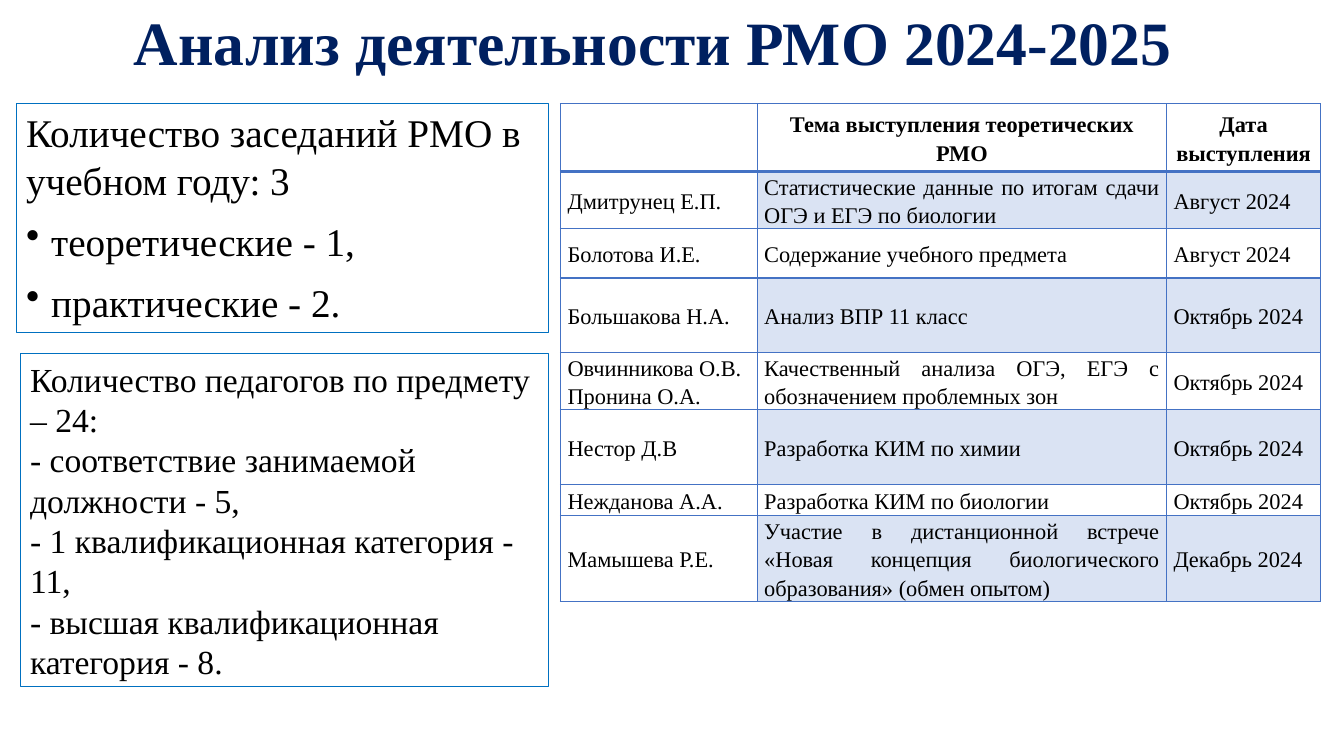
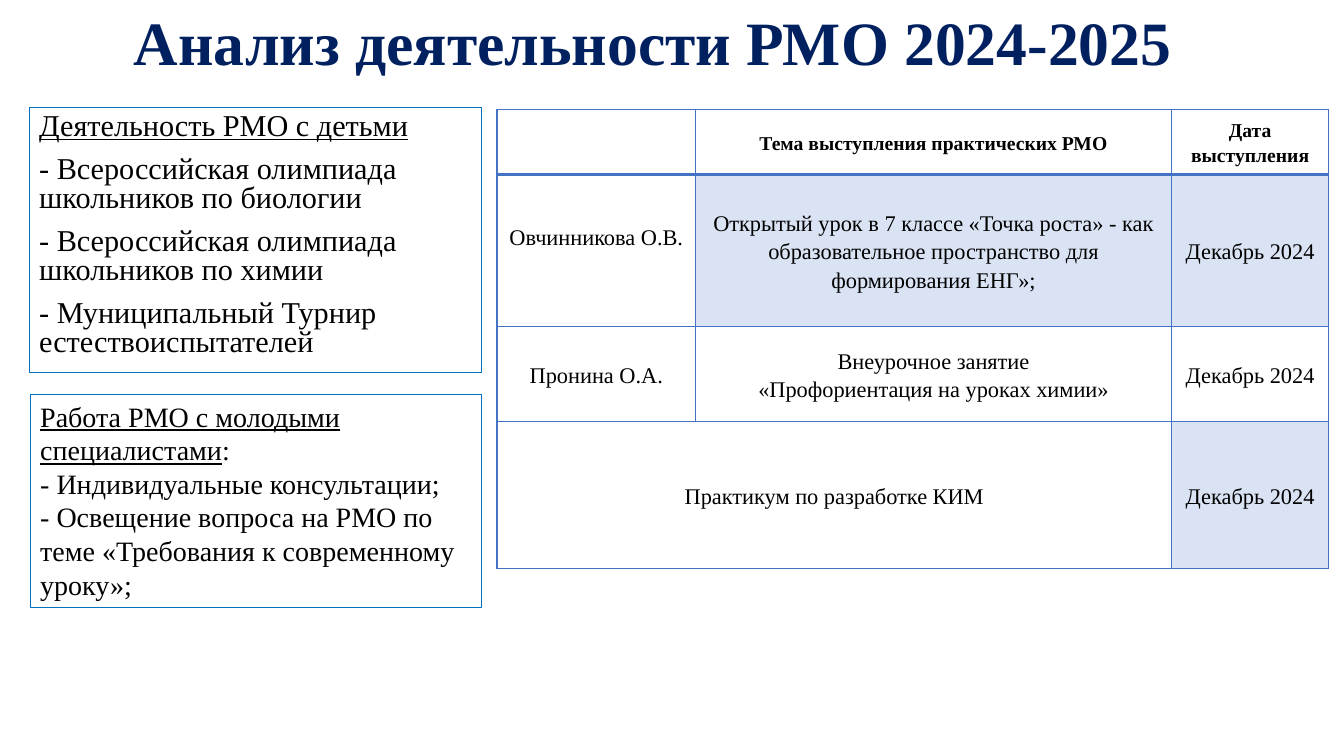
from lxml import etree
from pptx import Presentation
from pptx.dml.color import RGBColor
from pptx.enum.shapes import MSO_SHAPE
from pptx.enum.text import MSO_ANCHOR, MSO_AUTO_SIZE, PP_ALIGN
from pptx.oxml.ns import qn
from pptx.util import Pt

LEFT, CENTER, JUSTIFY = PP_ALIGN.LEFT, PP_ALIGN.CENTER, PP_ALIGN.JUSTIFY
TOP, MIDDLE = MSO_ANCHOR.TOP, MSO_ANCHOR.MIDDLE
RECTANGLE = MSO_SHAPE.RECTANGLE
NO_AUTOFIT = MSO_AUTO_SIZE.NONE

EMU_PER_PX = 9144
TITLE_ONLY = 5
FONT = "Times New Roman"
COLORS = {
    "title": "002060",
    "text": "000000",
    "frame": "0070C0",
    "grid": "4472C4",
    "band": "DAE3F3",
    "plain": "FFFFFF",
}
TITLE = "Анализ деятельности РМО 2024-2025"
BULLET = "• "


def px(length):
    return length * EMU_PER_PX


def rgb(name):
    return RGBColor.from_string(COLORS[name])


class Deck:
    def __init__(self):
        self.deck = Presentation()
        self.deck.slide_width, self.deck.slide_height = px(1333), px(750)
        self.page = None

    def add_page(self):
        self.page = self.deck.slides.add_slide(self.deck.slide_layouts[TITLE_ONLY])
        title = self.page.shapes.title
        title.left, title.top, title.width, title.height = map(px, (73, -27, 1150, 145))
        frame = title.text_frame
        frame.word_wrap, frame.auto_size = True, NO_AUTOFIT
        frame.vertical_anchor = MIDDLE
        para = frame.paragraphs[0]
        para.alignment, para.line_spacing = CENTER, 0.9
        self.add_span(para, TITLE, 44, "title", bold=True)

    def add_span(self, para, text, size, color="text", bold=False, underline=False):
        span = para.add_run()
        span.text = text
        font = span.font
        font.name, font.size, font.bold, font.underline = FONT, Pt(size), bold, underline
        font.color.rgb = rgb(color)

    def add_bullet(self, para):
        properties = para._p.get_or_add_pPr()
        properties.set("marL", str(px(25)))
        properties.set("indent", str(px(-25)))
        etree.SubElement(properties, qn("a:buChar"), char=BULLET.strip())

    def add_box(self, area, lines, size, spacing=1.0, gap=0):
        """Draw a framed box; each line is a string or a list of (text, underline)."""
        box = self.page.shapes.add_shape(RECTANGLE, *map(px, area))
        box.shadow.inherit = False
        box.fill.background()
        box.line.color.rgb = rgb("frame")
        box.line.width = 0
        frame = box.text_frame
        frame.word_wrap, frame.vertical_anchor = True, TOP
        for index, line in enumerate(lines):
            para = frame.add_paragraph() if index else frame.paragraphs[0]
            spans = [(line, False)] if isinstance(line, str) else line
            if spans[0][0].startswith(BULLET):
                self.add_bullet(para)
                spans = [(spans[0][0][len(BULLET):], False)]
            para.alignment, para.line_spacing = LEFT, spacing
            para.space_before = Pt(gap if index else 0)
            for text, underline in spans:
                self.add_span(para, text, size, underline=underline)

    def add_borders(self, cell, top, bottom):
        properties = cell._tc.get_or_add_tcPr()
        for side, width in (("L", 1), ("R", 1), ("T", top), ("B", bottom)):
            line = etree.SubElement(properties, qn(f"a:ln{side}"), w=str(Pt(width)))
            fill = etree.SubElement(line, qn("a:solidFill"))
            etree.SubElement(fill, qn("a:srgbClr"), val=COLORS["grid"])

    def add_cell(self, cell, text, row, column, alignment, header_size):
        header = row == 0
        self.add_borders(cell, 2 if row == 1 else 1, 2 if header else 1)
        cell.fill.solid()
        cell.fill.fore_color.rgb = rgb("band" if row % 2 and column else "plain")
        cell.vertical_anchor = MIDDLE
        cell.margin_left = cell.margin_right = px(7)
        cell.margin_top = cell.margin_bottom = px(5 if header else 0)
        for index, line in enumerate(text.split("\n") if text else []):
            frame = cell.text_frame
            para = frame.add_paragraph() if index else frame.paragraphs[0]
            para.alignment = CENTER if header else alignment
            para.line_spacing = 1.15
            self.add_span(para, line, header_size if header else 16, bold=header)

    def add_table(self, left, top, widths, heights, rows, alignment, header_size):
        """Draw a table; None in a row joins that cell to the one on its left."""
        area = map(px, (left, top, sum(widths), sum(heights)))
        table = self.page.shapes.add_table(len(rows), len(widths), *area).table
        table.first_row = table.horz_banding = False
        for column, width in zip(table.columns, widths):
            column.width = px(width)
        for row, height in zip(table.rows, heights):
            row.height = px(height)
        for row, texts in enumerate(rows):
            for column, text in enumerate(texts):
                cell = table.cell(row, column)
                self.add_cell(cell, text, row, column, alignment, header_size)
                if text is None:
                    table.cell(row, column - 1).merge(cell)
        return table


def add_theory_page(deck):
    deck.add_page()
    deck.add_box((16, 103, 528, 227), [
        "Количество заседаний РМО в учебном году: 3",
        BULLET + "теоретические - 1,",
        BULLET + "практические - 2.",
    ], 28, gap=10)
    deck.add_table(556, 103, (195, 406, 153), (67, 56, 49, 74, 56, 74, 31, 85), [
        ("", "Тема выступления теоретических РМО", "Дата выступления"),
        ("Дмитрунец Е.П.", "Статистические данные по итогам сдачи ОГЭ и ЕГЭ по биологии",
         "Август 2024"),
        ("Болотова И.Е.", "Содержание учебного предмета", "Август 2024"),
        ("Большакова Н.А.", "Анализ ВПР 11 класс", "Октябрь 2024"),
        ("Овчинникова О.В.\nПронина О.А.",
         "Качественный анализа ОГЭ, ЕГЭ с обозначением проблемных зон", "Октябрь 2024"),
        ("Нестор Д.В", "Разработка КИМ по химии", "Октябрь 2024"),
        ("Нежданова А.А.", "Разработка КИМ по биологии", "Октябрь 2024"),
        ("Мамышева Р.Е.", "Участие в дистанционной встрече «Новая концепция "
         "биологического образования» (обмен опытом)", "Декабрь 2024"),
    ], JUSTIFY, 16)
    deck.add_box((20, 351, 524, 330), [
        "Количество педагогов по предмету – 24:",
        "- соответствие занимаемой должности - 5,",
        "- 1 квалификационная категория - 11,",
        "- высшая квалификационная категория - 8.",
    ], 24)


def add_practice_page(deck):
    deck.add_page()
    deck.add_box((29, 107, 449, 263), [
        [("Деятельность РМО с детьми", True)],
        "- Всероссийская олимпиада школьников по биологии",
        "- Всероссийская олимпиада школьников по химии",
        "- Муниципальный Турнир естествоиспытателей",
    ], 21.6, spacing=0.8, gap=10)
    table = deck.add_table(493, 109, (197, 472, 156), (64, 151, 94, 146), [
        ("", "Тема выступления практических РМО", "Дата выступления"),
        ("Овчинникова О.В.", "Открытый урок в 7 классе «Точка роста» - как\n"
         "образовательное пространство для формирования ЕНГ»;", "Декабрь 2024"),
        ("Пронина О.А.", "Внеурочное занятие\n«Профориентация на уроках химии»",
         "Декабрь 2024"),
        ("Практикум по разработке КИМ", None, "Декабрь 2024"),
    ], CENTER, 14)
    table.cell(1, 0).margin_bottom = px(28)
    deck.add_box((30, 391, 448, 212), [
        [("Работа РМО с молодыми специалистами", True), (":", False)],
        "- Индивидуальные консультации;",
        "- Освещение вопроса на РМО по теме «Требования к современному уроку»;",
    ], 20)


def main():
    deck = Deck()
    add_theory_page(deck)
    add_practice_page(deck)
    deck.deck.save("out.pptx")


if __name__ == "__main__":
    main()
